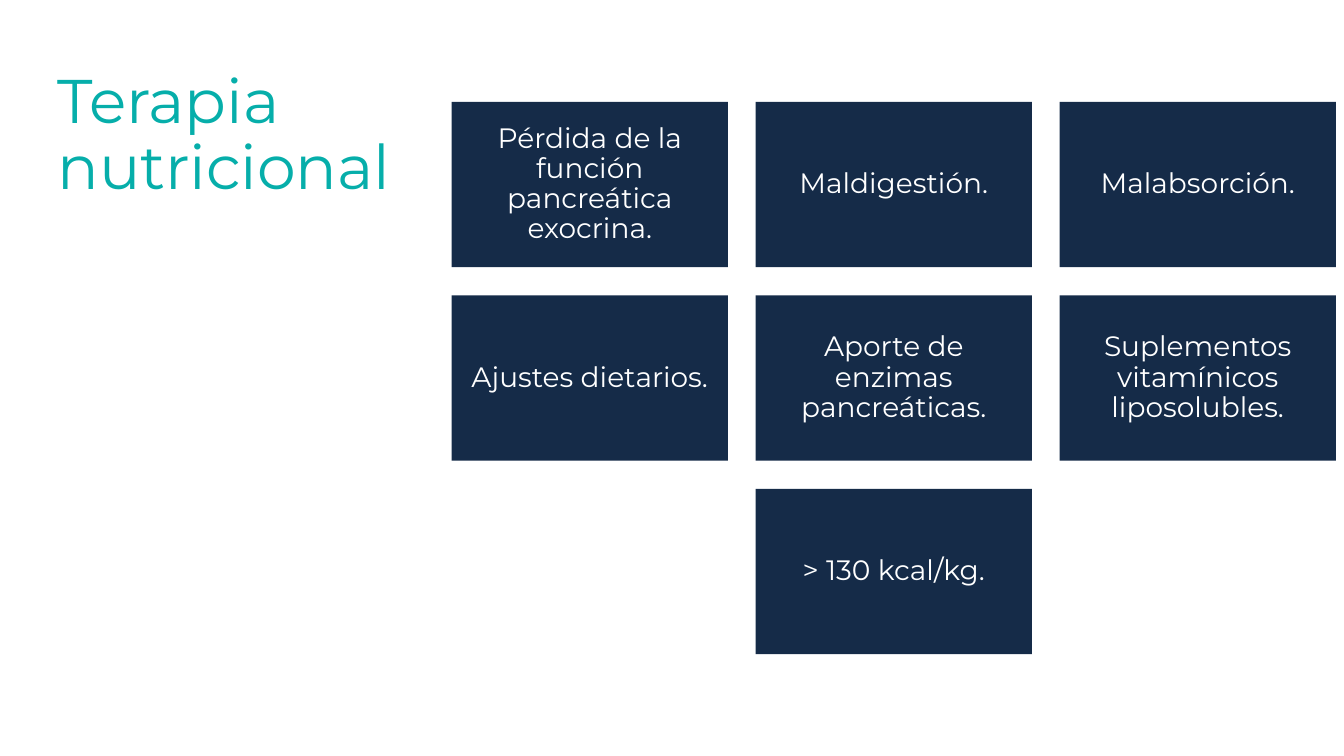
"""Build the nutritional therapy slide."""
from dataclasses import dataclass

from pptx import Presentation
from pptx.dml.color import RGBColor
from pptx.enum.shapes import MSO_SHAPE
from pptx.enum.text import MSO_ANCHOR, MSO_AUTO_SIZE, PP_ALIGN
from pptx.util import Inches, Pt

TITLE = "Terapia nutricional"
ROWS = [
    ["Pérdida de la función pancreática exocrina.", "Maldigestión.", "Malabsorción."],
    ["Ajustes dietarios.", "Aporte de enzimas pancreáticas.", "Suplementos vitamínicos liposolubles."],
    ["> 130 kcal/kg."],
]


@dataclass(frozen=True)
class Theme:
    """Hold the colours, font and type sizes."""
    teal: str = "06AEAA"
    navy: str = "152B48"
    white: str = "FFFFFF"
    font: str = "Montserrat"
    head: int = 44
    body: int = 20


THEME = Theme()
LEFT, TOP = 4.48, 1.01
WIDE, HIGH = 2.74, 1.64
STEP_X, STEP_Y = 3.015, 1.92
COLS = 3
PAD = 0.08


def write(frame, text, size, color, align):
    """Fill a text frame with one styled run."""
    frame.word_wrap = True
    frame.auto_size = MSO_AUTO_SIZE.NONE
    frame.vertical_anchor = MSO_ANCHOR.MIDDLE
    para = frame.paragraphs[0]
    para.alignment = align
    para.line_spacing = 0.9
    run = para.add_run()
    run.text = text
    run.font.name = THEME.font
    run.font.size = Pt(size)
    run.font.color.rgb = RGBColor.from_string(color)


def place_card(slide, text, x, y):
    """Draw one navy card with centred text."""
    card = slide.shapes.add_shape(
        MSO_SHAPE.RECTANGLE, Inches(x), Inches(y), Inches(WIDE), Inches(HIGH))
    card.shadow.inherit = False
    card.fill.solid()
    card.fill.fore_color.rgb = RGBColor.from_string(THEME.navy)
    card.line.fill.background()
    frame = card.text_frame
    frame.margin_left = frame.margin_right = Inches(PAD)
    frame.margin_top = frame.margin_bottom = Inches(PAD)
    write(frame, text, THEME.body, THEME.white, PP_ALIGN.CENTER)


def main():
    """Compose and save the slide."""
    deck = Presentation()
    deck.slide_width, deck.slide_height = Inches(13.33), Inches(7.5)
    slide = deck.slides.add_slide(deck.slide_layouts[5])
    title = slide.shapes.title
    title.left, title.top = Inches(0.47), Inches(0.63)
    title.width, title.height = Inches(3.82), Inches(1.45)
    write(title.text_frame, TITLE, THEME.head, THEME.teal, PP_ALIGN.LEFT)
    for r, row in enumerate(ROWS):
        shift = (COLS - len(row)) / 2
        for c, text in enumerate(row):
            place_card(slide, text, LEFT + (c + shift) * STEP_X, TOP + r * STEP_Y)
    deck.save("out.pptx")


if __name__ == "__main__":
    main()
